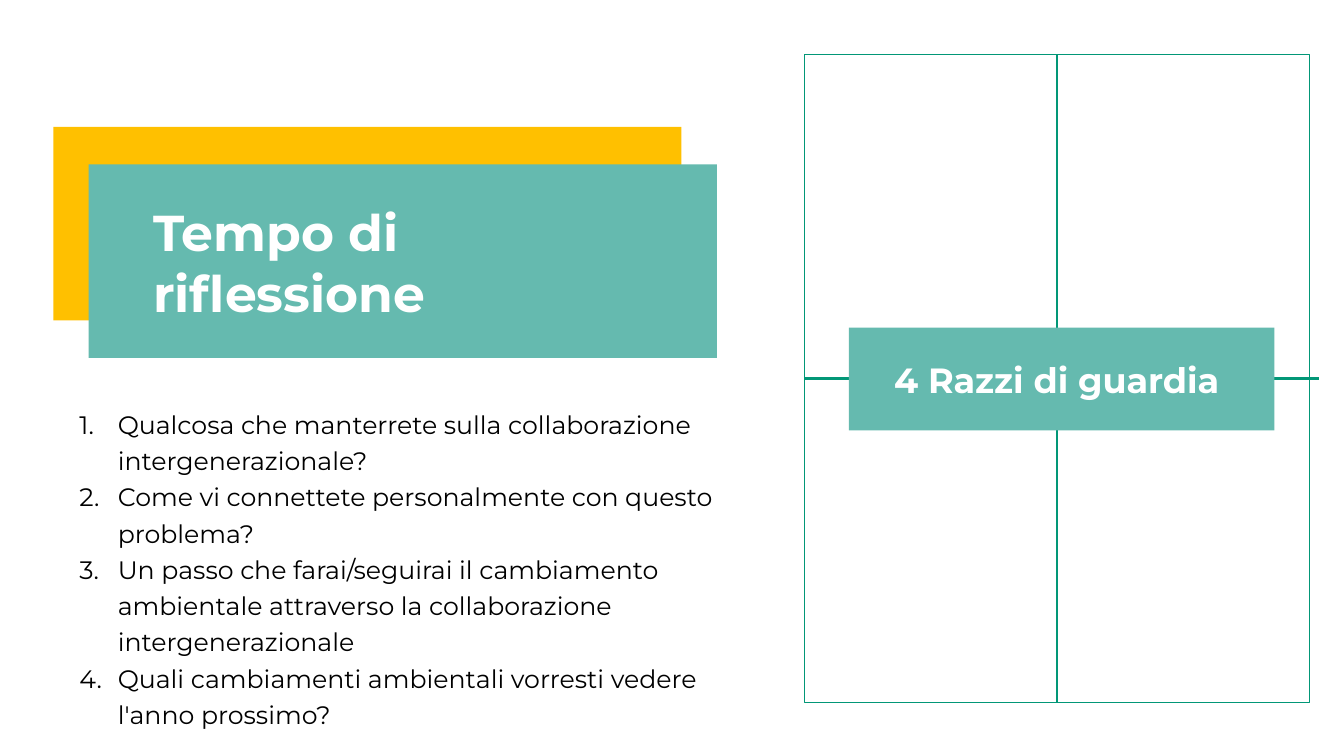
"""Build the reflection-time slide with four questions and a four-pane window."""
from dataclasses import dataclass

from lxml.etree import SubElement
from pptx import Presentation
from pptx.dml.color import RGBColor as Rgb
from pptx.enum.shapes import MSO_CONNECTOR as Connector, MSO_SHAPE as Preset
from pptx.enum.text import MSO_ANCHOR as Anchor, MSO_AUTO_SIZE as AutoSize, PP_ALIGN as Align
from pptx.oxml.ns import qn
from pptx.util import Inches, Pt


@dataclass(frozen=True)
class Theme:
    font: str = "Montserrat"
    black: str = "000000"
    white: str = "FFFFFF"
    amber: str = "FFC000"
    teal: str = "65BAAF"
    green: str = "029777"
    title_size: float = 36
    label_size: float = 25
    body_size: float = 18
    frame_width: float = 1
    bar_width: float = 1.5


@dataclass(frozen=True)
class Panel:
    left: float
    top: float
    width: float
    height: float
    fill: str
    line: str | None = None


THEME = Theme()
BACK_PANEL = Panel(0.53, 1.26, 6.23, 1.92, THEME.amber)
FRONT_PANEL = Panel(0.88, 1.63, 6.23, 1.92, THEME.teal)
WINDOW = Panel(7.98, 0.54, 5.01, 6.43, THEME.white, THEME.green)
LABEL = Panel(8.42, 3.25, 4.22, 1.02, THEME.teal)
BAR_END = 13.08
INDENT = 0.38
QUESTIONS = (
    "Qualcosa che manterrete sulla collaborazione intergenerazionale?",
    "Come vi connettete personalmente con questo problema?",
    "Un passo che farai/seguirai il cambiamento ambientale attraverso la collaborazione intergenerazionale",
    "Quali cambiamenti ambientali vorresti vedere l'anno prossimo?",
)


def add_panel(page, panel: Panel):
    box = page.shapes.add_shape(Preset.RECTANGLE, Inches(panel.left), Inches(panel.top),
                                Inches(panel.width), Inches(panel.height))
    box.shadow.inherit = False
    box.fill.solid()
    box.fill.fore_color.rgb = Rgb.from_string(panel.fill)
    if panel.line:
        box.line.color.rgb = Rgb.from_string(panel.line)
        box.line.width = Pt(THEME.frame_width)
    else:
        box.line.fill.background()
    return box


def add_bar(page, start: tuple[float, float], end: tuple[float, float]):
    bar = page.shapes.add_connector(Connector.STRAIGHT, *map(Inches, start + end))
    bar.line.color.rgb = Rgb.from_string(THEME.green)
    bar.line.width = Pt(THEME.bar_width)
    SubElement(bar.element.spPr, qn("a:effectLst"))
    return bar


def add_span(para, text: str, size: float, color: str, bold: bool = False) -> None:
    span = para.add_run()
    span.text = text
    span.font.name = THEME.font
    span.font.size = Pt(size)
    span.font.bold = bold
    span.font.color.rgb = Rgb.from_string(color)


def number_para(para) -> None:
    properties = para._p.get_or_add_pPr()
    properties.set("marL", str(Inches(INDENT)))
    properties.set("indent", str(-Inches(INDENT)))
    color = SubElement(properties, qn("a:buClr"))
    SubElement(color, qn("a:srgbClr"), val=THEME.black)
    SubElement(properties, qn("a:buFont"), typeface="+mj-lt")
    SubElement(properties, qn("a:buAutoNum"), type="arabicPeriod")
    para.line_spacing = 1.2


def place_title(page) -> None:
    title = page.shapes.title
    title.left, title.top = Inches(1.42), Inches(2.24)
    title.width, title.height = Inches(4.56), Inches(0.71)
    page.shapes.element.append(title.element)
    frame = title.text_frame
    frame.word_wrap = True
    frame.auto_size = AutoSize.SHAPE_TO_FIT_TEXT
    frame.vertical_anchor = Anchor.MIDDLE
    para = frame.paragraphs[0]
    para.alignment = Align.LEFT
    add_span(para, "Tempo di riflessione", THEME.title_size, THEME.white, True)


def add_questions(page) -> None:
    box = page.shapes.add_textbox(Inches(0.69), Inches(3.95), Inches(6.94), Inches(2.62))
    frame = box.text_frame
    frame.word_wrap = True
    frame.auto_size = AutoSize.SHAPE_TO_FIT_TEXT
    for index, question in enumerate(QUESTIONS):
        para = frame.add_paragraph() if index else frame.paragraphs[0]
        number_para(para)
        add_span(para, question, THEME.body_size, THEME.black)


def add_window(page) -> None:
    window = add_panel(page, WINDOW)
    center = WINDOW.left + WINDOW.width / 2
    middle = WINDOW.top + WINDOW.height / 2
    upright = add_bar(page, (center, WINDOW.top), (center, WINDOW.top + WINDOW.height))
    upright.begin_connect(window, 0)
    upright.end_connect(window, 2)
    crossbar = add_bar(page, (WINDOW.left, middle), (BAR_END, middle))
    crossbar.begin_connect(window, 1)
    frame = add_panel(page, LABEL).text_frame
    frame.word_wrap = True
    frame.vertical_anchor = Anchor.MIDDLE
    para = frame.paragraphs[0]
    para.alignment = Align.CENTER
    add_span(para, "4 Razzi di guardia ", THEME.label_size, THEME.white, True)


def main() -> None:
    deck = Presentation()
    deck.slide_width, deck.slide_height = Inches(13.33), Inches(7.5)
    page = deck.slides.add_slide(deck.slide_layouts.get_by_name("Title Only"))
    for panel in (BACK_PANEL, FRONT_PANEL):
        add_panel(page, panel)
    place_title(page)
    add_questions(page)
    add_window(page)
    deck.save("out.pptx")


if __name__ == "__main__":
    main()
